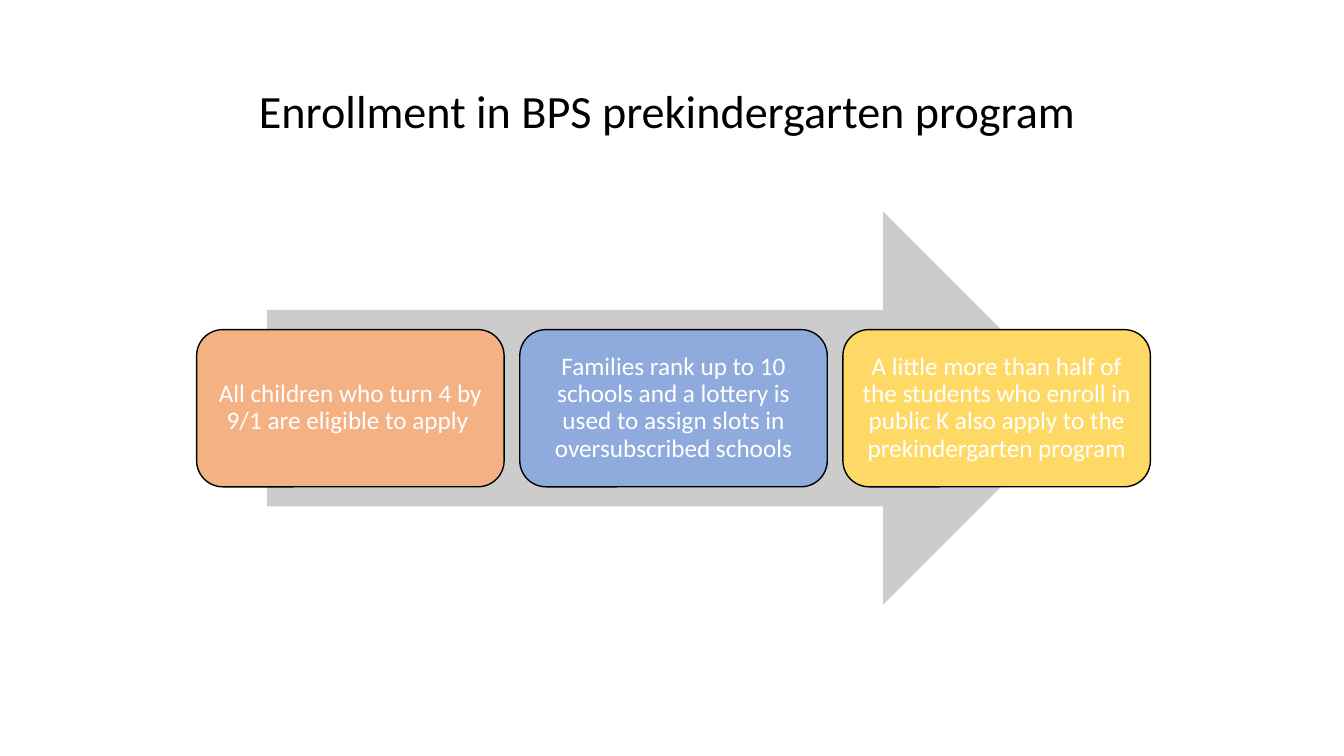
from pptx import Presentation
from pptx.dml.color import RGBColor
from pptx.enum.shapes import MSO_SHAPE
from pptx.enum.text import MSO_ANCHOR, MSO_AUTO_SIZE, PP_ALIGN
from pptx.util import Inches, Pt

RIGHT_ARROW = MSO_SHAPE.RIGHT_ARROW
ROUNDED = MSO_SHAPE.ROUNDED_RECTANGLE
MIDDLE = MSO_ANCHOR.MIDDLE
CENTER = PP_ALIGN.CENTER
NO_AUTOFIT = MSO_AUTO_SIZE.NONE

THEME = {
    "font": "Calibri",
    "title_size": Pt(33),
    "step_size": Pt(18),
    "black": RGBColor.from_string("000000"),
    "white": RGBColor.from_string("FFFFFF"),
    "arrow": RGBColor.from_string("CCCCCC"),
    "orange": RGBColor.from_string("F4B183"),
    "blue": RGBColor.from_string("8FAADC"),
    "yellow": RGBColor.from_string("FFD966"),
}

STEPS = [
    ("orange", "All children who turn 4 by 9/1 are eligible to apply "),
    ("blue", "Families rank up to 10 schools and a lottery is used to assign slots in oversubscribed schools"),
    ("yellow", "A little more than half of the students who enroll in public K also apply to the prekindergarten program"),
]
STEP_LEFT, STEP_PITCH = 1.95, 3.205


def add_filled_shape(slide, kind, left, top, width, height, color):
    shape = slide.shapes.add_shape(kind, Inches(left), Inches(top), Inches(width), Inches(height))
    shape.shadow.inherit = False
    shape.fill.solid()
    shape.fill.fore_color.rgb = THEME[color]
    return shape


def set_text(shape, text, size, color):
    frame = shape.text_frame
    frame.text = text
    frame.word_wrap = True
    frame.auto_size = NO_AUTOFIT
    frame.vertical_anchor = MIDDLE
    paragraph = frame.paragraphs[0]
    paragraph.alignment = CENTER
    paragraph.line_spacing = 0.9
    font = paragraph.runs[0].font
    font.name = THEME["font"]
    font.size = THEME[size]
    font.color.rgb = THEME[color]


presentation = Presentation()
presentation.slide_width = Inches(13.33)
presentation.slide_height = Inches(7.5)
slide = presentation.slides.add_slide(presentation.slide_layouts[5])

title = slide.shapes.title
title.left, title.top = Inches(0.92), Inches(0.4)
title.width, title.height = Inches(11.5), Inches(1.45)
set_text(title, "Enrollment in BPS prekindergarten program ", "title_size", "black")

arrow = add_filled_shape(slide, RIGHT_ARROW, 2.65, 2.1, 8.06, 3.9, "arrow")
arrow.line.fill.background()

for index, (color, text) in enumerate(STEPS):
    step = add_filled_shape(slide, ROUNDED, STEP_LEFT + index * STEP_PITCH, 3.27, 3.05, 1.56, color)
    step.line.color.rgb = THEME["black"]
    step.line.width = Pt(1)
    set_text(step, text, "step_size", "white")
    frame = step.text_frame
    frame.margin_left = frame.margin_right = Inches(0.07)
    frame.margin_top = frame.margin_bottom = Inches(0.07)

presentation.save("out.pptx")
